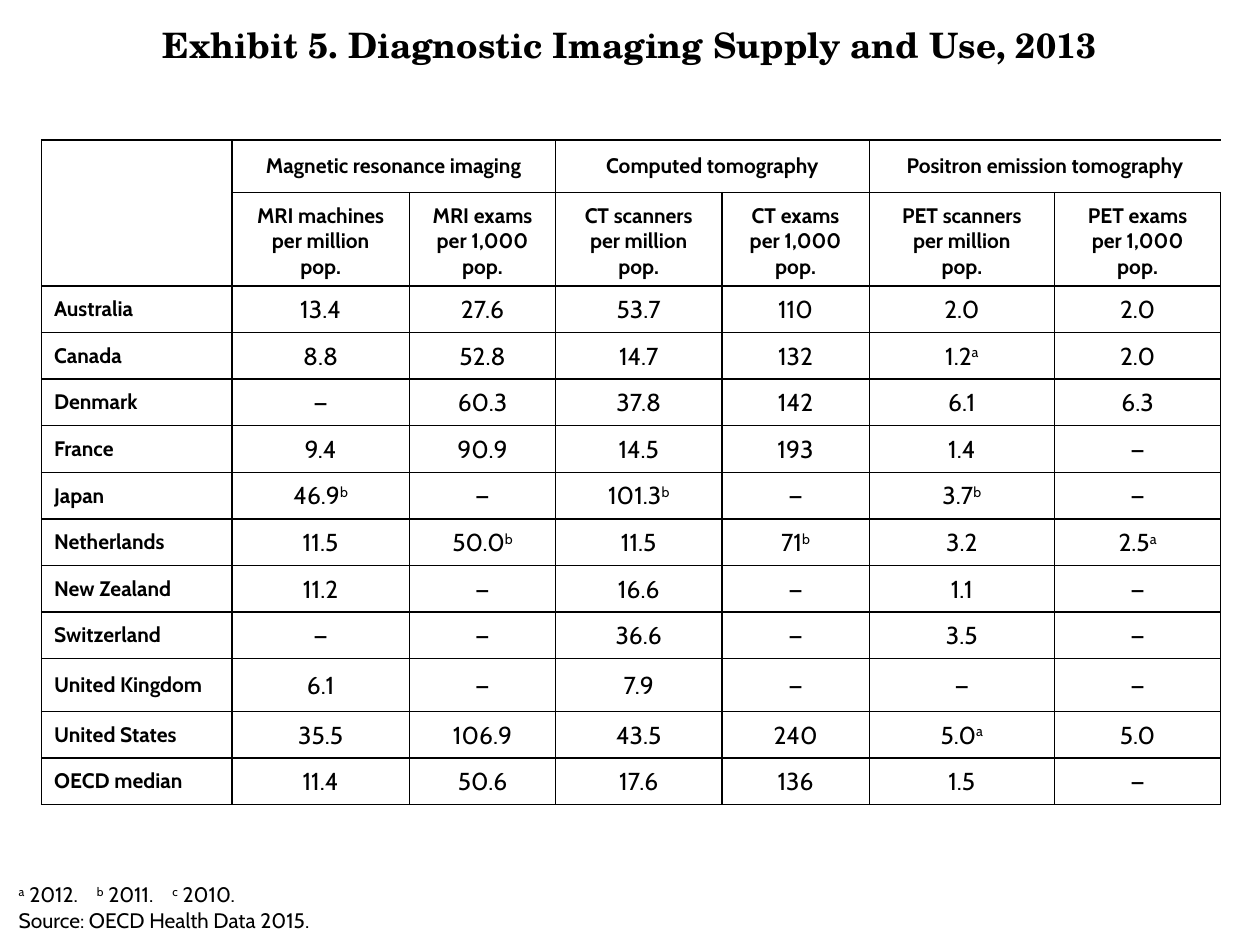
from lxml.etree import SubElement as add_node
from pptx import Presentation
from pptx.dml.color import RGBColor
from pptx.enum.text import MSO_ANCHOR as Anchor, PP_ALIGN as Align
from pptx.oxml.ns import qn
from pptx.util import Inches, Pt

BODY_FONT, TITLE_FONT, INK = "Cabin", "TeX Gyre Schola", "000000"
NO_STYLE = "{2D5ABB26-0587-4C30-8999-92F81FD0307C}"
COLUMNS = [1.51, 1.41, 1.16, 1.32, 1.17, 1.47, 1.32]
ROWS = [0.42, 0.74] + [0.37] * 8 + [0.42] + [0.37] * 2
GROUPS = ["Magnetic resonance imaging", "Computed tomography", "Positron emission tomography"]
MEASURES = [
    "MRI machines per million\vpop.", "MRI exams per 1,000 pop.",
    "CT scanners per million pop.", "CT exams per 1,000 pop.",
    "PET scanners\vper million\vpop.", "PET exams\vper 1,000\vpop.",
]
COUNTRIES = {
    "Australia": "13.4 27.6 53.7 110 2.0 2.0",
    "Canada": "8.8 52.8 14.7 132 1.2^a 2.0",
    "Denmark": "— 60.3 37.8 142 6.1 6.3",
    "France": "9.4 90.9 14.5 193 1.4 —",
    "Japan": "46.9^b — 101.3^b — 3.7^b —",
    "Netherlands": "11.5 50.0^b 11.5 71^b 3.2 2.5^a",
    "New Zealand": "11.2 — 16.6 — 1.1 —",
    "Switzerland": "— — 36.6 — 3.5 —",
    "United Kingdom": "6.1 — 7.9 — — —",
    "United States": "35.5 106.9 43.5 240 5.0^a 5.0",
    "OECD median": "11.4 50.6 17.6 136 1.5 —",
}


def color(value):
    """Turn a hex string into a colour."""
    return RGBColor.from_string(value)


def style_span(span, size, bold=False, font=BODY_FONT):
    """Set the font of one run."""
    span.font.name, span.font.size, span.font.bold = font, Pt(size), bold
    span.font.color.rgb = color(INK)


def write(para, text, size, bold=False, font=BODY_FONT, align=Align.LEFT):
    """Fill a paragraph, raising the letter that follows each caret."""
    first, *marked = text.split("^")
    para.text, para.alignment = first, align
    for part in marked:
        mark = para.add_run()
        mark.text = part[0]
        mark.font._element.set("baseline", "30000")
        if part[1:]:
            para.add_run().text = part[1:]
    for span in para.runs:
        style_span(span, size, bold, font)


def add_box(page, left, top, width, height, anchor=Anchor.TOP):
    """Add a wrapping text box and return its text frame."""
    frame = page.shapes.add_textbox(*map(Inches, (left, top, width, height))).text_frame
    frame.word_wrap, frame.vertical_anchor = True, anchor
    return frame


def set_tabs(para, stops):
    """Set left tab stops in inches."""
    tabs = add_node(para._p.get_or_add_pPr(), qn("a:tabLst"))
    for stop in stops:
        add_node(tabs, qn("a:tab"), pos=str(Inches(stop)), algn="l")


def rule_cell(cell, column):
    """Rule a cell above and below, and at the edges of its column group."""
    sides = "LRTB" if column == 0 else ("LTB" if column % 2 else "RTB")
    for side in sides:
        line = add_node(cell._tc.get_or_add_tcPr(), qn(f"a:ln{side}"), w=str(Pt(1)))
        add_node(add_node(line, qn("a:solidFill")), qn("a:srgbClr"), val=INK)
    cell.fill.background()


def fill_cell(cell, text, anchor=Anchor.MIDDLE, align=Align.CENTER):
    """Write a bold heading into a cell."""
    cell.vertical_anchor = anchor
    write(cell.text_frame.paragraphs[0], text, 12, True, align=align)


def fill_value(cell, text):
    """Write a centred figure into a cell with narrow margins."""
    cell.vertical_anchor = Anchor.MIDDLE
    cell.margin_left = cell.margin_right = cell.margin_top = Inches(0.01)
    cell.margin_bottom = 0
    write(cell.text_frame.paragraphs[0], text, 14, align=Align.CENTER)


def add_grid(page, left, top):
    """Add the ruled, unfilled table with its merged heading cells."""
    size = map(Inches, (left, top, sum(COLUMNS), sum(ROWS)))
    table = page.shapes.add_table(len(ROWS), len(COLUMNS), *size).table
    table.first_row = table.horz_banding = False
    table._tbl.tblPr.find(qn("a:tableStyleId")).text = NO_STYLE
    for column, width in zip(table.columns, COLUMNS):
        column.width = Inches(width)
    for row, height in zip(table.rows, ROWS):
        row.height = Inches(height)
        for index, cell in enumerate(row.cells):
            rule_cell(cell, index)
    table.cell(0, 0).merge(table.cell(1, 0))
    for column in range(1, len(COLUMNS), 2):
        table.cell(0, column).merge(table.cell(0, column + 1))
    return table


def fill_grid(table):
    """Write the headings, countries and figures."""
    for index, group in enumerate(GROUPS):
        fill_cell(table.cell(0, 2 * index + 1), group)
    for column, measure in enumerate(MEASURES, 1):
        fill_cell(table.cell(1, column), measure, Anchor.BOTTOM)
    for row, (country, values) in enumerate(COUNTRIES.items(), 2):
        fill_cell(table.cell(row, 0), country, align=Align.LEFT)
        for column, value in enumerate(values.split(), 1):
            fill_value(table.cell(row, column), value)


def add_notes(page):
    """Add the footnotes and the source line."""
    frame = add_box(page, 0.05, 6.95, 9.21, 0.5)
    write(frame.paragraphs[0], "^a 2012.\t^b 2011.\t^c 2010.", 12)
    set_tabs(frame.paragraphs[0], (0.62, 1.22))
    write(frame.add_paragraph(), "Source: OECD Health Data 2015.", 12)


def main():
    """Build and save the slide."""
    deck = Presentation()
    deck.slide_width, deck.slide_height = Inches(10), Inches(7.5)
    page = deck.slides.add_slide(deck.slide_layouts[6])
    title = add_box(page, 0, 0.1, 10, 0.5, Anchor.MIDDLE)
    write(title.paragraphs[0], "Exhibit 5. Diagnostic Imaging Supply and Use, 2013",
          20, True, TITLE_FONT, Align.CENTER)
    fill_grid(add_grid(page, 0.33, 1.11))
    add_notes(page)
    deck.save("out.pptx")


if __name__ == "__main__":
    main()
